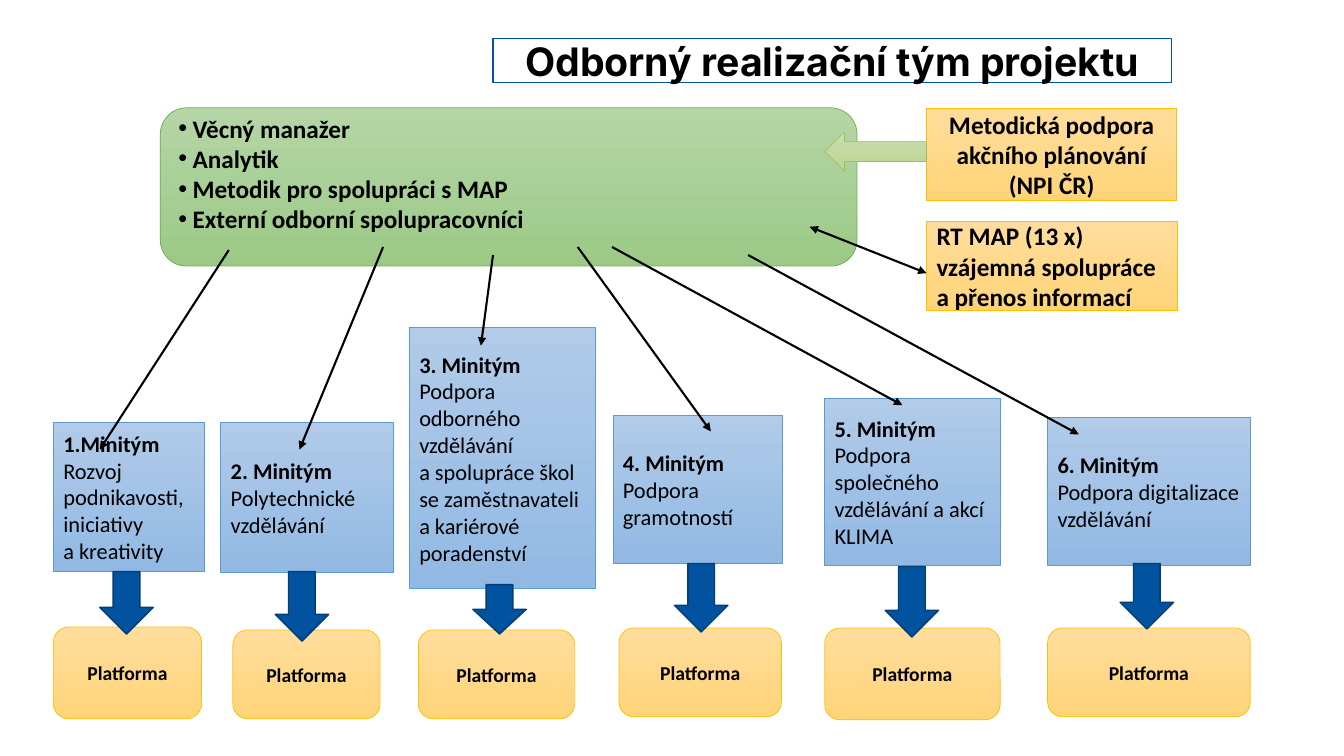
from lxml import etree
from pptx import Presentation
from pptx import util as u
from pptx.dml.color import RGBColor
from pptx.enum import shapes, text
from pptx.oxml import ns

BLACK = RGBColor(0x00, 0x00, 0x00)
WHITE = RGBColor(0xFF, 0xFF, 0xFF)
NAVY = RGBColor(0x02, 0x53, 0x9F)
NAVY_EDGE = RGBColor(0x01, 0x3D, 0x76)
GREEN_EDGE = RGBColor(0x70, 0xAD, 0x47)
GREEN = (RGBColor(0xB5, 0xD5, 0xA7), RGBColor(0x9C, 0xCA, 0x86))
GOLD_EDGE = RGBColor(0xFF, 0xC0, 0x00)
GOLD = (RGBColor(0xFF, 0xDD, 0x9C), RGBColor(0xFF, 0xD4, 0x79))
BLUE_EDGE = RGBColor(0x5B, 0x9B, 0xD5)
BLUE = (RGBColor(0xB1, 0xCB, 0xE9), RGBColor(0x92, 0xB9, 0xE4))
OLIVE_EDGE = RGBColor(0x9F, 0xBF, 0x5B)
OLIVE = (RGBColor(0xCC, 0xDD, 0xB0), RGBColor(0xBC, 0xD3, 0x92))

FORM = shapes.MSO_SHAPE
LEFT, CENTER = text.PP_ALIGN.LEFT, text.PP_ALIGN.CENTER

ROLES = [
    "Věcný manažer",
    "Analytik",
    "Metodik pro spolupráci s MAP",
    "Externí odborní spolupracovníci",
]

TEAMS = [
    ("1.Minitým", "Rozvoj podnikavosti, iniciativy \na kreativity",
     (0.53, 4.19, 1.5, 1.48), (0.53, 6.22, 1.47, 0.91), (0.99, 5.67, 0.62)),
    ("2. Minitým", "Polytechnické vzdělávání",
     (2.19, 4.19, 1.71, 1.49), (2.31, 6.25, 1.46, 0.88), (2.73, 5.67, 0.69)),
    ("3. Minitým",
     "Podpora odborného vzdělávání \na spolupráce škol se zaměstnavateli a kariérové poradenství",
     (4.06, 3.25, 1.85, 2.59), (4.15, 6.25, 1.55, 0.88), (4.69, 5.8, 0.49)),
    ("4. Minitým", "Podpora gramotností",
     (6.08, 4.12, 1.68, 1.47), (6.14, 6.23, 1.61, 0.88), (6.69, 5.59, 0.68)),
    ("5. Minitým", "Podpora společného vzdělávání a akcí KLIMA",
     (8.18, 3.95, 1.74, 1.66), (8.18, 6.23, 1.74, 0.91), (8.78, 5.62, 0.7)),
    ("6. Minitým", "Podpora digitalizace vzdělávání",
     (10.39, 4.14, 2.01, 1.47), (10.39, 6.23, 2.01, 0.88), (11.11, 5.59, 0.65)),
]

TEAM_LINKS = [
    (2.27, 2.48, 0.99, 4.46),
    (3.8, 2.45, 2.97, 4.46),
    (4.89, 2.53, 4.77, 3.43),
    (5.73, 2.45, 7.05, 4.28),
    (6.07, 2.45, 8.95, 4.02),
    (7.42, 2.53, 10.7, 4.31),
]


def inches(values):
    return [u.Inches(value) for value in values]


def place(shape, box):
    shape.left, shape.top, shape.width, shape.height = inches(box)


def add_run(paragraph, content, size, bold=True, font="Calibri"):
    for index, line in enumerate(content.split("\n")):
        if index:
            paragraph.add_line_break()
        run = paragraph.add_run()
        run.text = line
        run.font.name = font
        run.font.size = u.Pt(size)
        run.font.bold = bold
        run.font.color.rgb = BLACK


def add_block(slide, form, box, colours, edge, line_width=0.5):
    shape = slide.shapes.add_shape(form, *inches(box))
    shape.shadow.inherit = False
    if isinstance(colours, RGBColor):
        shape.fill.solid()
        shape.fill.fore_color.rgb = colours
    else:
        shape.fill.gradient()
        shape.fill.gradient_angle = 270
        for stop, colour in zip(shape.fill.gradient_stops, colours):
            stop.color.rgb = colour
    shape.line.color.rgb = edge
    shape.line.width = u.Pt(line_width)
    return shape


def write(shape, lines, size, alignment=LEFT):
    frame = shape.text_frame
    frame.word_wrap = True
    frame.vertical_anchor = text.MSO_ANCHOR.MIDDLE
    for index, (content, bold) in enumerate(lines):
        paragraph = frame.add_paragraph() if index else frame.paragraphs[0]
        paragraph.alignment = alignment
        add_run(paragraph, content, size, bold)


def add_link(slide, ends, both_ends=False):
    link = slide.shapes.add_connector(shapes.MSO_CONNECTOR.STRAIGHT, *inches(ends))
    link.line.color.rgb = BLACK
    link.line.width = u.Pt(1.5)
    outline = link.line._get_or_add_ln()
    for tag in ("a:headEnd", "a:tailEnd") if both_ends else ("a:tailEnd",):
        etree.SubElement(outline, ns.qn(tag), type="triangle")
    etree.SubElement(link.element.spPr, ns.qn("a:effectLst"))


def format_title(title):
    place(title, (4.89, 0.38, 6.73, 0.44))
    title.fill.solid()
    title.fill.fore_color.rgb = WHITE
    title.line.color.rgb = NAVY
    title.line.width = u.Pt(1)
    frame = title.text_frame
    frame.word_wrap = True
    frame.auto_size = text.MSO_AUTO_SIZE.NONE
    frame.vertical_anchor = text.MSO_ANCHOR.MIDDLE
    frame.paragraphs[0].alignment = CENTER
    add_run(frame.paragraphs[0], "Odborný realizační tým projektu", 28, font="Inter")


def add_roles(slide, body):
    panel = add_block(slide, FORM.ROUNDED_RECTANGLE, (1.59, 1.07, 6.91, 1.57), GREEN, GREEN_EDGE)
    body.element.addprevious(panel.element)
    place(body, (1.67, 1.07, 6.75, 1.57))
    frame = body.text_frame
    frame.word_wrap = True
    frame.auto_size = text.MSO_AUTO_SIZE.NONE
    frame.vertical_anchor = text.MSO_ANCHOR.TOP
    for index, role in enumerate(ROLES):
        paragraph = frame.add_paragraph() if index else frame.paragraphs[0]
        properties = paragraph._p.get_or_add_pPr()
        properties.set("marL", str(u.Inches(0.14)))
        properties.set("indent", str(-u.Inches(0.14)))
        etree.SubElement(properties, ns.qn("a:buChar"), char="•")
        paragraph.space_before = u.Pt(0)
        add_run(paragraph, role, 18)


def add_teams(slide):
    for name, task, box, _, _ in TEAMS:
        team = add_block(slide, FORM.RECTANGLE, box, BLUE, BLUE_EDGE)
        write(team, [(name, True), (task, False)], 16)
    for ends in TEAM_LINKS:
        add_link(slide, ends)
    for _, _, _, box, (left, top, height) in TEAMS:
        platform = add_block(slide, FORM.ROUNDED_RECTANGLE, box, GOLD, GOLD_EDGE)
        write(platform, [("Platforma", True)], 14, CENTER)
        add_block(slide, FORM.DOWN_ARROW, (left, top, 0.53, height), NAVY, NAVY_EDGE, 1)


def add_partners(slide):
    regional = add_block(slide, FORM.RECTANGLE, (9.19, 2.2, 2.49, 0.88), GOLD, GOLD_EDGE)
    write(regional, [("RT MAP (13 x)", True),
                     ("vzájemná spolupráce \na přenos informací", True)], 18)
    add_link(slide, (8.03, 2.25, 9.19, 2.71), both_ends=True)
    support = add_block(slide, FORM.RECTANGLE, (9.19, 1.07, 2.48, 0.92), GOLD, GOLD_EDGE)
    write(support, [("Metodická podpora akčního plánování (NPI ČR)", True)], 18, CENTER)
    add_block(slide, FORM.LEFT_ARROW, (8.18, 1.31, 1.01, 0.39), OLIVE, OLIVE_EDGE)


def main():
    presentation = Presentation()
    presentation.slide_width = u.Inches(13.33)
    presentation.slide_height = u.Inches(7.5)
    slide = presentation.slides.add_slide(presentation.slide_layouts[1])
    format_title(slide.shapes.title)
    add_roles(slide, slide.placeholders[1])
    add_partners(slide)
    add_teams(slide)
    presentation.save("out.pptx")


if __name__ == "__main__":
    main()
